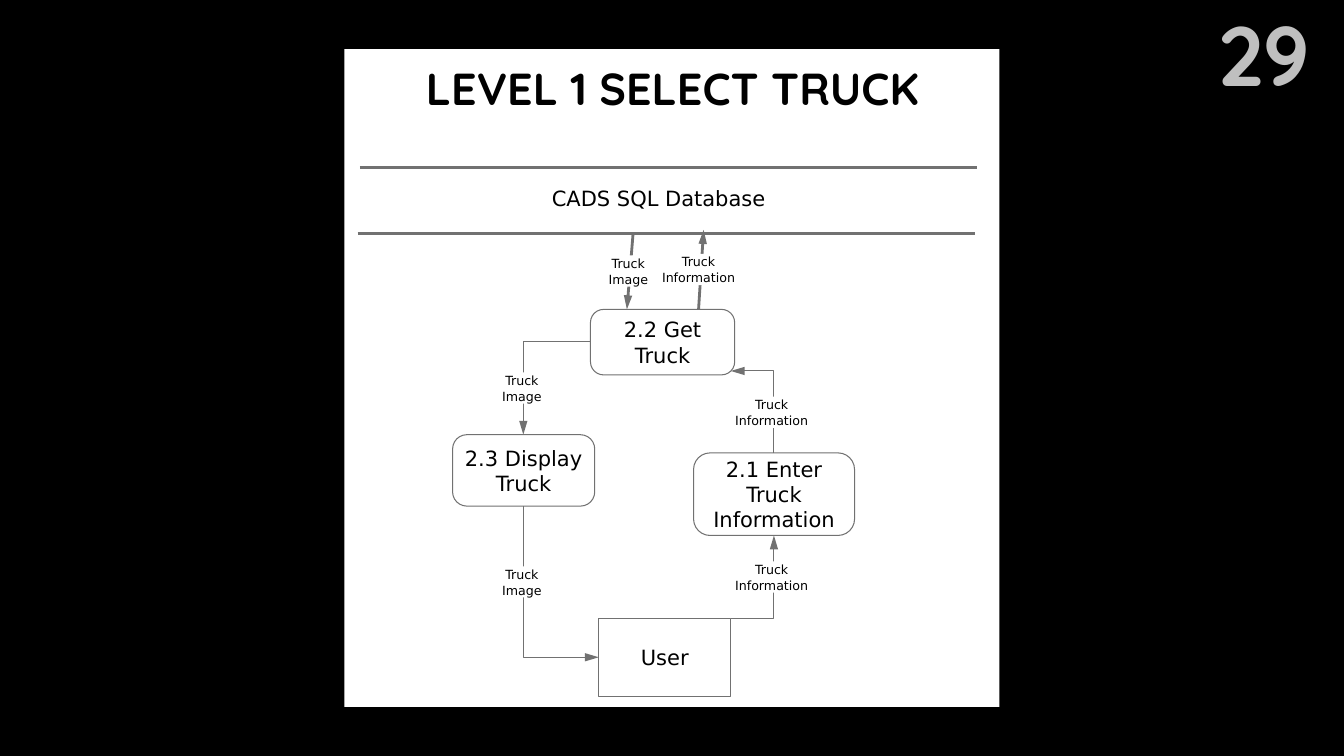
from pptx import Presentation
from pptx.dml.color import RGBColor
from pptx.enum.shapes import MSO_CONNECTOR, MSO_SHAPE as SHAPE
from pptx.enum.text import MSO_ANCHOR as ANCHOR, PP_ALIGN as ALIGN
from pptx.oxml.ns import qn
from pptx.util import Pt
from lxml.etree import SubElement

GRAY = "717171"


def rgb(value):
    return RGBColor.from_string(value)


def write(sp, text, size, font="DejaVu Sans", color="000000", bold=False,
          align=ALIGN.CENTER, wrap=False, inset=0, spacing=None):
    tf = sp.text_frame
    tf.word_wrap = wrap
    tf.vertical_anchor = ANCHOR.MIDDLE
    tf.margin_left = tf.margin_right = Pt(inset)
    tf.margin_top = tf.margin_bottom = Pt(inset / 2)
    p = tf.paragraphs[0]
    p.text = text
    p.alignment = align
    if spacing:
        p.line_spacing = Pt(spacing)
    for r in p.runs:
        r.font.name = font
        r.font.size = Pt(size)
        r.font.bold = bold
        r.font.color.rgb = rgb(color)


prs = Presentation()
prs.slide_width, prs.slide_height = Pt(960), Pt(540)
s = prs.slides.add_slide(prs.slide_layouts[5])
s.background.fill.solid()
s.background.fill.fore_color.rgb = rgb("000000")

# White panel
panel = s.shapes.add_shape(SHAPE.RECTANGLE, Pt(246), Pt(35), Pt(468), Pt(470))
panel.shadow.inherit = False
panel.fill.solid()
panel.fill.fore_color.rgb = rgb("FFFFFF")
panel.line.fill.background()

# Data store name
sp = s.shapes.add_textbox(Pt(379), Pt(132.5), Pt(183), Pt(18))
write(sp, "CADS SQL Database", 15)

# Processes and the user
nodes = [
    (SHAPE.RECTANGLE, "User", 427.7, 442, 94.3, 55.4),
    (SHAPE.ROUNDED_RECTANGLE, "2.1 Enter\nTruck\nInformation", 495.4, 323.5, 115, 59),
    (SHAPE.ROUNDED_RECTANGLE, "2.3 Display\nTruck", 323.3, 310.5, 101.5, 51),
    (SHAPE.ROUNDED_RECTANGLE, "2.2 Get\nTruck", 421.8, 221, 103, 46.8),
]
for kind, text, x, y, w, h in nodes:
    sp = s.shapes.add_shape(kind, Pt(x), Pt(y), Pt(w), Pt(h))
    sp.shadow.inherit = False
    if kind == SHAPE.ROUNDED_RECTANGLE:
        sp.adjustments[0] = 0.2
    sp.fill.solid()
    sp.fill.fore_color.rgb = rgb("FFFFFF")
    sp.line.color.rgb = rgb(GRAY)
    sp.line.width = Pt(0)
    write(sp, text, 15)

# Data store rules (no arrowhead) and flows (arrowhead at the last point)
lines = [
    (False, [(257, 119.5), (697.7, 119.5)]),
    (False, [(255.5, 167), (696.2, 167)]),
    (True, [(522, 442), (552.8, 442), (552.8, 382.5)]),
    (True, [(552.8, 323.5), (552.8, 265), (522, 265)]),
    (True, [(499, 221), (502.6, 164.2)]),
    (True, [(452.2, 167), (447.8, 221)]),
    (True, [(421.8, 244), (373.8, 244), (373.8, 310.5)]),
    (True, [(373.8, 361.5), (373.8, 469.5), (427.7, 469.5)]),
]
for arrow, points in lines:
    pts = [(Pt(x), Pt(y)) for x, y in points]
    if len(pts) == 2:
        sp = s.shapes.add_connector(MSO_CONNECTOR.STRAIGHT, *pts[0], *pts[1])
        SubElement(sp._element.spPr, qn("a:effectLst"))
    else:
        fb = s.shapes.build_freeform(*pts[0])
        fb.add_line_segments(pts[1:], close=False)
        sp = fb.convert_to_shape()
        sp.shadow.inherit = False
        sp.fill.background()
    sp.line.color.rgb = rgb(GRAY)
    sp.line.width = Pt(0)
    if arrow:
        ln = sp.line._get_or_add_ln()
        SubElement(ln, qn("a:tailEnd"), type="triangle", w="med", len="lg")

# Flow labels, centred on x
labels = [
    ("Information", 551.2, 401),
    ("Information", 551.2, 283.3),
    ("Information", 499, 181.3),
    ("Image", 448.8, 182.5),
    ("Image", 372.8, 266),
    ("Image", 372.8, 404.5),
]
for item, x, y in labels:
    w = 55 if item == "Information" else 30
    sp = s.shapes.add_textbox(Pt(x - w / 2), Pt(y), Pt(w), Pt(22.3))
    sp.fill.solid()
    sp.fill.fore_color.rgb = rgb("FFFFFF")
    write(sp, "Truck\n" + item, 9, spacing=11.3)

# Title, brought in front of the panel
title = s.shapes.title
title.left, title.top, title.width, title.height = Pt(223), Pt(27.5), Pt(515), Pt(70)
write(title, "LEVEL 1 SELECT TRUCK", 32, font="Quicksand", bold=True, wrap=True, inset=7.2)
s.shapes._spTree.append(title._element)

# Page number
sp = s.shapes.add_textbox(Pt(859.7), Pt(-2), Pt(82.8), Pt(80))
write(sp, "29", 60, font="Quicksand", color="BFBFBF", bold=True,
      align=ALIGN.RIGHT, inset=7.2)

prs.save("out.pptx")
